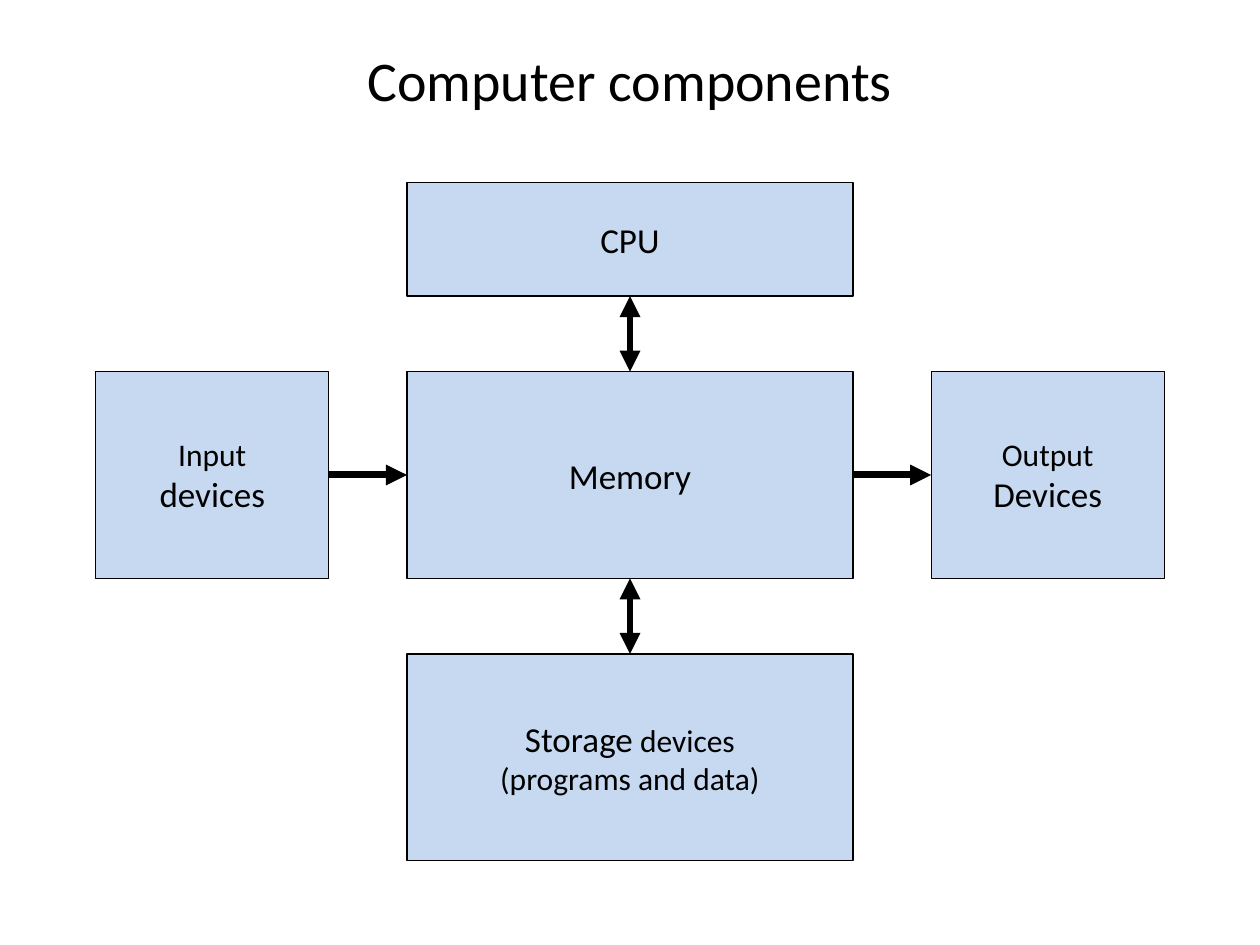
import pptx
import pptx.util
import pptx.dml.color
import pptx.enum.shapes
import pptx.enum.text
import pptx.oxml
import pptx.oxml.ns
from pptx.util import Inches

TOP, LEFT, BOTTOM, RIGHT = range(4)
INK = "000000"
PALE_BLUE = "C6D9F1"


def rgb(value):
    """Turn a hex string into a colour."""
    return pptx.dml.color.RGBColor.from_string(value)


def add_run(p, text, size=20, color=INK, font="Calibri"):
    """Append formatted text to a paragraph."""
    r = p.add_run()
    r.text = text
    r.font.size = pptx.util.Pt(size)
    r.font.name = font
    r.font.color.rgb = rgb(color)


def fill_text(tf, lines, wrap=False):
    """Write centred lines, each a list of (text, size) pairs."""
    tf.word_wrap = wrap
    tf.vertical_anchor = pptx.enum.text.MSO_ANCHOR.MIDDLE
    for i, line in enumerate(lines):
        p = tf.add_paragraph() if i else tf.paragraphs[0]
        p.alignment = pptx.enum.text.PP_ALIGN.CENTER
        for text, size in line:
            add_run(p, text, size=size)


def add_title(s, text):
    """Place and format the title placeholder."""
    sp = s.shapes.title
    sp.left, sp.top, sp.width, sp.height = map(Inches, (0, 0, 10, 1.25))
    fill_text(sp.text_frame, [[(text, 32)]], wrap=True)


def add_box(s, x, y, w, h, lines):
    """Add a labelled component box."""
    sp = s.shapes.add_shape(pptx.enum.shapes.MSO_SHAPE.RECTANGLE,
                            Inches(x), Inches(y), Inches(w), Inches(h))
    sp.shadow.inherit = False
    sp.fill.solid()
    sp.fill.fore_color.rgb = rgb(PALE_BLUE)
    sp.line.color.rgb = rgb(INK)
    sp.line.width = pptx.util.Pt(0.75)
    fill_text(sp.text_frame, lines)
    return sp


def add_arrow(s, start, start_side, end, end_side, both=False):
    """Join two boxes with a thick one-way or two-way arrow."""
    c = s.shapes.add_connector(pptx.enum.shapes.MSO_CONNECTOR.STRAIGHT, 0, 0, 0, 0)
    c.begin_connect(start, start_side)
    c.end_connect(end, end_side)
    c.line.color.rgb = rgb(INK)
    c.line.width = pptx.util.Pt(4)
    ln = c.line._get_or_add_ln()
    for tag in ("a:headEnd", "a:tailEnd") if both else ("a:tailEnd",):
        end_mark = pptx.oxml.xmlchemy.OxmlElement(tag)
        end_mark.set("type", "triangle")
        ln.append(end_mark)
    c._element.spPr.append(pptx.oxml.xmlchemy.OxmlElement("a:effectLst"))


def main():
    """Build the computer components slide."""
    prs = pptx.Presentation()
    prs.slide_width, prs.slide_height = Inches(10), Inches(7.5)
    s = prs.slides.add_slide(prs.slide_layouts[5])
    add_title(s, "Computer components")

    center_w, side_w, tall, short = 3.54, 1.85, 1.64, 0.9
    gap_x, gap_y = 0.62, 0.6
    center_x = (10 - center_w) / 2
    cpu_y = 1.45
    memory_y = cpu_y + short + gap_y
    storage_y = memory_y + tall + gap_y

    memory = add_box(s, center_x, memory_y, center_w, tall, [[("Memory", 20)]])
    cpu = add_box(s, center_x, cpu_y, center_w, short, [[("CPU", 20)]])
    storage = add_box(s, center_x, storage_y, center_w, tall,
                      [[("Storage", 20), (" devices", 18)],
                       [("(programs and data)", 18)]])
    inputs = add_box(s, center_x - gap_x - side_w, memory_y, side_w, tall,
                     [[("Input", 18)], [("devices", 20)]])
    outputs = add_box(s, center_x + center_w + gap_x, memory_y, side_w, tall,
                      [[("Output", 18)], [("Devices", 20)]])

    add_arrow(s, memory, BOTTOM, storage, TOP, both=True)
    add_arrow(s, cpu, BOTTOM, memory, TOP, both=True)
    add_arrow(s, inputs, RIGHT, memory, LEFT)
    add_arrow(s, memory, RIGHT, outputs, LEFT)
    prs.save("out.pptx")


if __name__ == "__main__":
    main()
